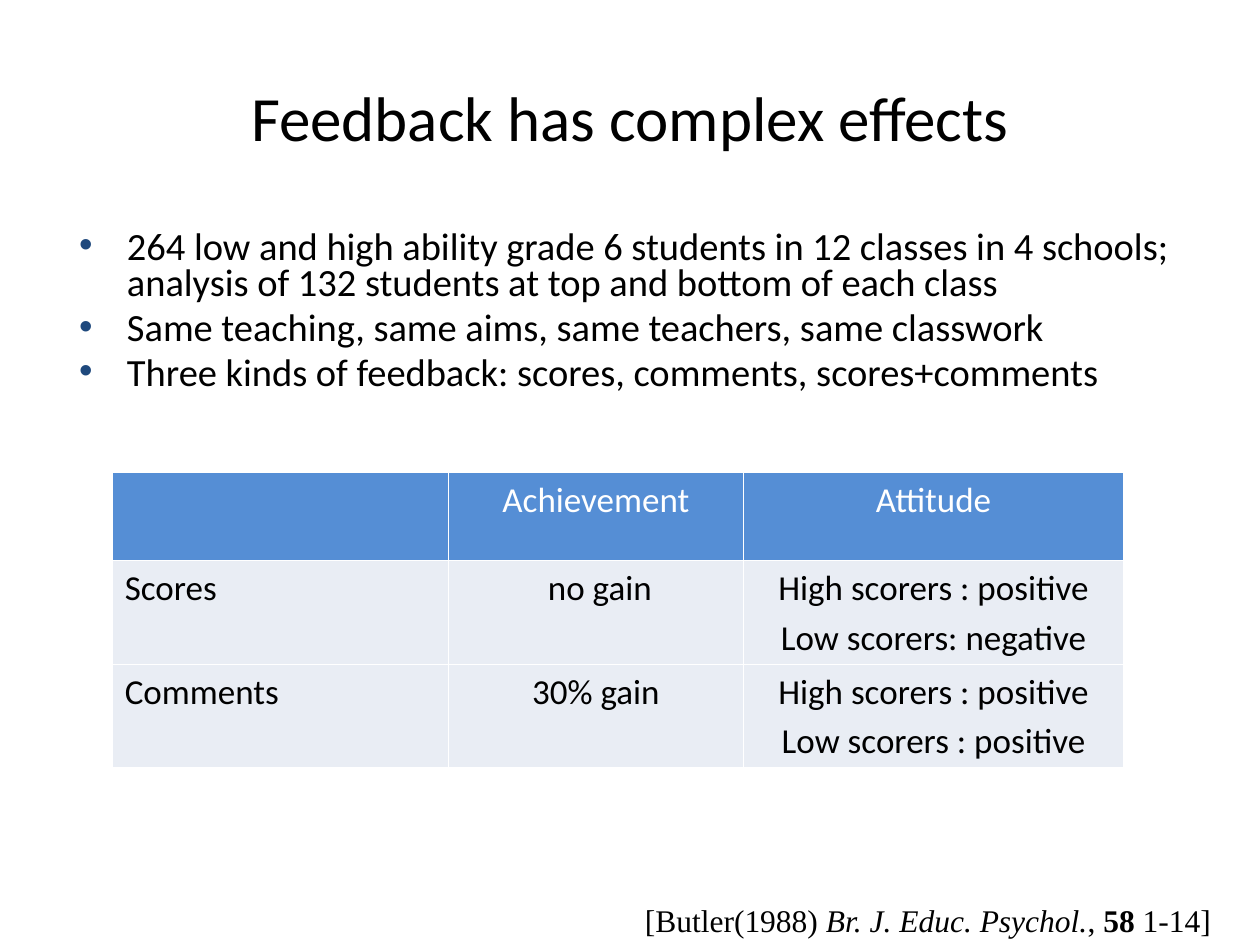
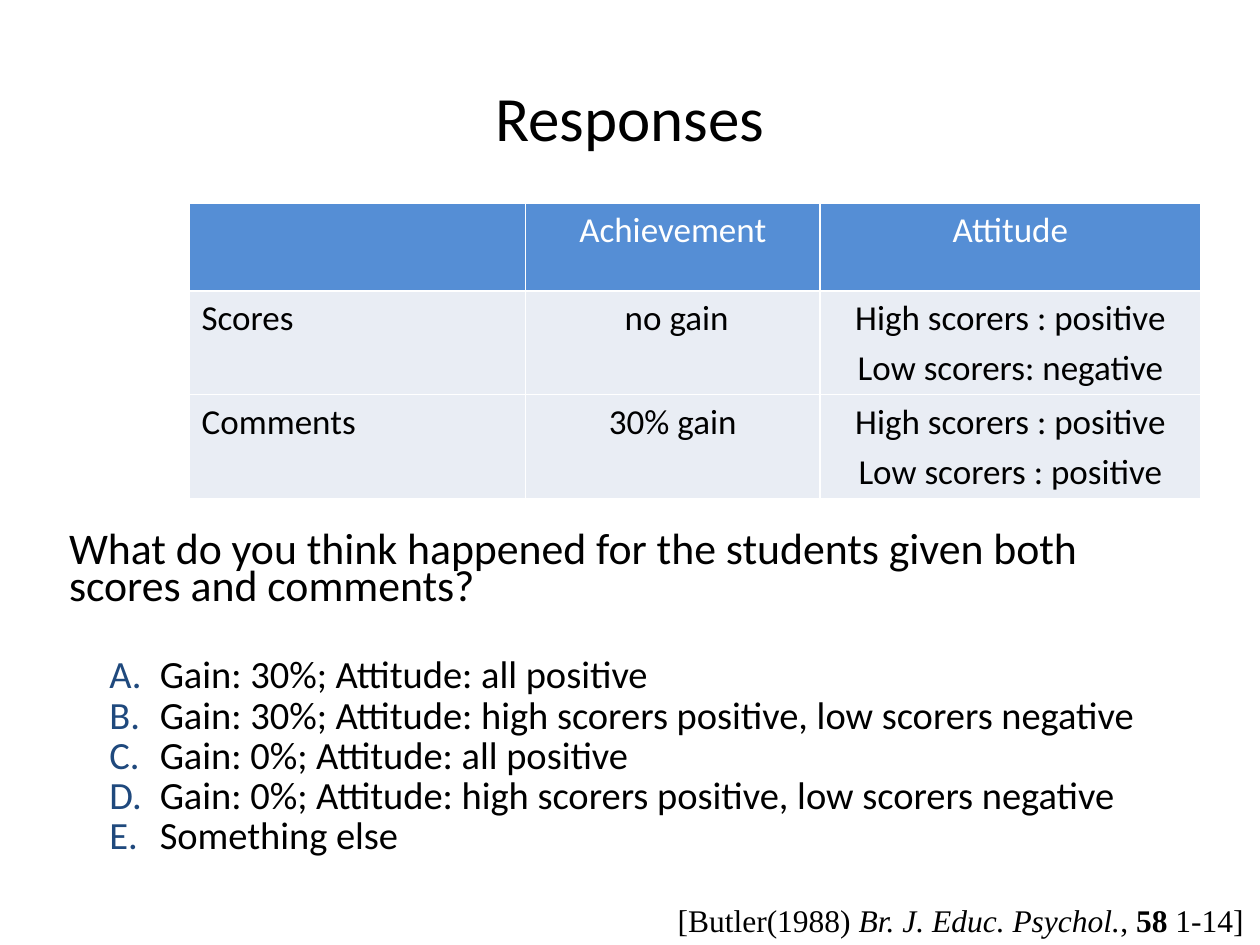
import pptx
import pptx.dml.color
import pptx.enum.text
import pptx.oxml.ns
import pptx.util
from lxml import etree

Inches, Pt = pptx.util.Inches, pptx.util.Pt
ALIGN = pptx.enum.text.PP_ALIGN
ANCHOR = pptx.enum.text.MSO_ANCHOR
qn = pptx.oxml.ns.qn

# Shared look
BLACK, WHITE = "000000", "FFFFFF"
BULLET_BLUE, HEADER_BLUE, CELL_GREY = "1F497D", "558ED5", "E9EDF4"
SANS, SERIF = "Calibri", "Times New Roman"

# Shared content
RESULTS = [
    ["", ["Achievement"], ["Attitude"]],
    [["Scores"], [" no gain"],
     ["High scorers : positive", "Low scorers: negative"]],
    [["Comments"], ["30% gain"],
     ["High scorers : positive", "Low scorers : positive"]],
]
COLUMN_WIDTHS = [2.67, 2.34, 3.02]
ROW_HEIGHTS = [0.7, 0.82, 0.82]
CITATION = [("[Butler(1988) ", ""), ("Br. J. Educ. Psychol.", "i"),
            (", ", ""), ("58", "b"), (" 1-14]", "")]


def rgb(hex_code):
    return pptx.dml.color.RGBColor.from_string(hex_code)


def add_run(paragraph, text, size, color=BLACK, font=SANS, style=""):
    run = paragraph.add_run()
    run.text = text
    run.font.size = Pt(size)
    run.font.name = font
    run.font.color.rgb = rgb(color)
    run.font.bold = "b" in style
    run.font.italic = "i" in style


def add_frame(slide, left, top, width, height, wrap=True):
    frame = slide.shapes.add_textbox(
        Inches(left), Inches(top), Inches(width), Inches(height)).text_frame
    frame.word_wrap = wrap
    return frame


def next_paragraph(frame):
    """Return the unused first paragraph, or a new one."""
    first = frame.paragraphs[0]
    return frame.add_paragraph() if first.runs else first


def add_body_line(frame, text, size, spacing, before=None):
    paragraph = next_paragraph(frame)
    paragraph.line_spacing = spacing
    paragraph.space_before = Pt(size * 0.2 if before is None else before)
    add_run(paragraph, text, size)
    return paragraph


def set_marker(paragraph, tag, attributes, indent, hanging):
    """Give a paragraph a coloured bullet or number with a hanging indent."""
    props = paragraph._p.get_or_add_pPr()
    props.set("marL", str(Inches(indent)))
    props.set("indent", str(-Inches(hanging)))
    color = etree.SubElement(props, qn("a:buClr"))
    etree.SubElement(color, qn("a:srgbClr"), val=BULLET_BLUE)
    if tag == "a:buChar":
        etree.SubElement(props, qn("a:buFont"), typeface="Arial")
    etree.SubElement(props, qn(tag), **attributes)


def add_title(slide, text):
    frame = add_frame(slide, 0.5, 0.3, 9, 1.25)
    frame.vertical_anchor = ANCHOR.MIDDLE
    paragraph = frame.paragraphs[0]
    paragraph.alignment = ALIGN.CENTER
    add_run(paragraph, text, 36)


def add_citation(slide, left):
    frame = add_frame(slide, left, 7.1, 4.72, 0.4, wrap=False)
    frame.auto_size = pptx.enum.text.MSO_AUTO_SIZE.SHAPE_TO_FIT_TEXT
    for text, style in CITATION:
        add_run(frame.paragraphs[0], text, 18, font=SERIF, style=style)


def style_cell(cell, fill):
    props = cell._tc.get_or_add_tcPr()
    for side in ("lnL", "lnR", "lnT", "lnB"):
        border = etree.SubElement(props, qn("a:" + side), w=str(Pt(1)))
        solid = etree.SubElement(border, qn("a:solidFill"))
        etree.SubElement(solid, qn("a:srgbClr"), val=WHITE)
    cell.fill.solid()
    cell.fill.fore_color.rgb = rgb(fill)


def add_results_table(slide, left, top):
    table = slide.shapes.add_table(
        len(ROW_HEIGHTS), len(COLUMN_WIDTHS), Inches(left), Inches(top),
        Inches(sum(COLUMN_WIDTHS)), Inches(sum(ROW_HEIGHTS))).table
    table.first_row = table.horz_banding = False
    for column, width in zip(table.columns, COLUMN_WIDTHS):
        column.width = Inches(width)
    for row, height in zip(table.rows, ROW_HEIGHTS):
        row.height = Inches(height)
    for r, row_content in enumerate(RESULTS):
        for c, lines in enumerate(row_content):
            cell = table.cell(r, c)
            style_cell(cell, CELL_GREY if r else HEADER_BLUE)
            for line in lines:
                paragraph = next_paragraph(cell.text_frame)
                paragraph.alignment = ALIGN.CENTER if c else ALIGN.LEFT
                paragraph.space_before = Pt(4)
                add_run(paragraph, line, 20, BLACK if r else WHITE)


def build_effects(slide):
    add_title(slide, "Feedback has complex effects")
    study = add_frame(slide, 0.53, 1.78, 9.14, 1.52)
    for fact in (
        "264 low and high ability grade 6 students in 12 classes in 4 schools; "
        "analysis of 132 students at top and bottom of each class",
        "Same teaching, same aims, same teachers, same classwork",
        "Three kinds of feedback: scores, comments, scores+comments",
    ):
        paragraph = add_body_line(study, fact, 22, 0.8)
        set_marker(paragraph, "a:buChar", {"char": "•"}, 0.38, 0.38)
    add_citation(slide, 5.02)
    add_results_table(slide, 0.89, 3.75)


def build_responses(slide):
    add_citation(slide, 5.28)
    add_title(slide, "Responses")
    quiz = add_frame(slide, 0.45, 4.2, 9.14, 3.3)
    add_body_line(quiz, "What do you think happened for the students given "
                  "both scores and comments?", 25, 0.7)
    answers = (
        "Gain: 30%; Attitude: all positive",
        "Gain: 30%; Attitude: high scorers positive, low scorers negative",
        "Gain: 0%; Attitude: all positive",
        "Gain: 0%; Attitude: high scorers positive, low scorers negative",
        "Something else",
    )
    for i, answer in enumerate(answers):
        # A wider gap sets the answers apart from the question
        paragraph = add_body_line(quiz, answer, 22, 0.7, None if i else 31)
        set_marker(paragraph, "a:buAutoNum", {"type": "alphaUcPeriod"},
                   0.72, 0.4)
    add_results_table(slide, 1.5, 1.61)


def main():
    deck = pptx.Presentation()
    deck.slide_width, deck.slide_height = Inches(10), Inches(7.5)
    blank = deck.slide_layouts[6]
    for build in (build_effects, build_responses):
        build(deck.slides.add_slide(blank))
    deck.save("out.pptx")


if __name__ == "__main__":
    main()
